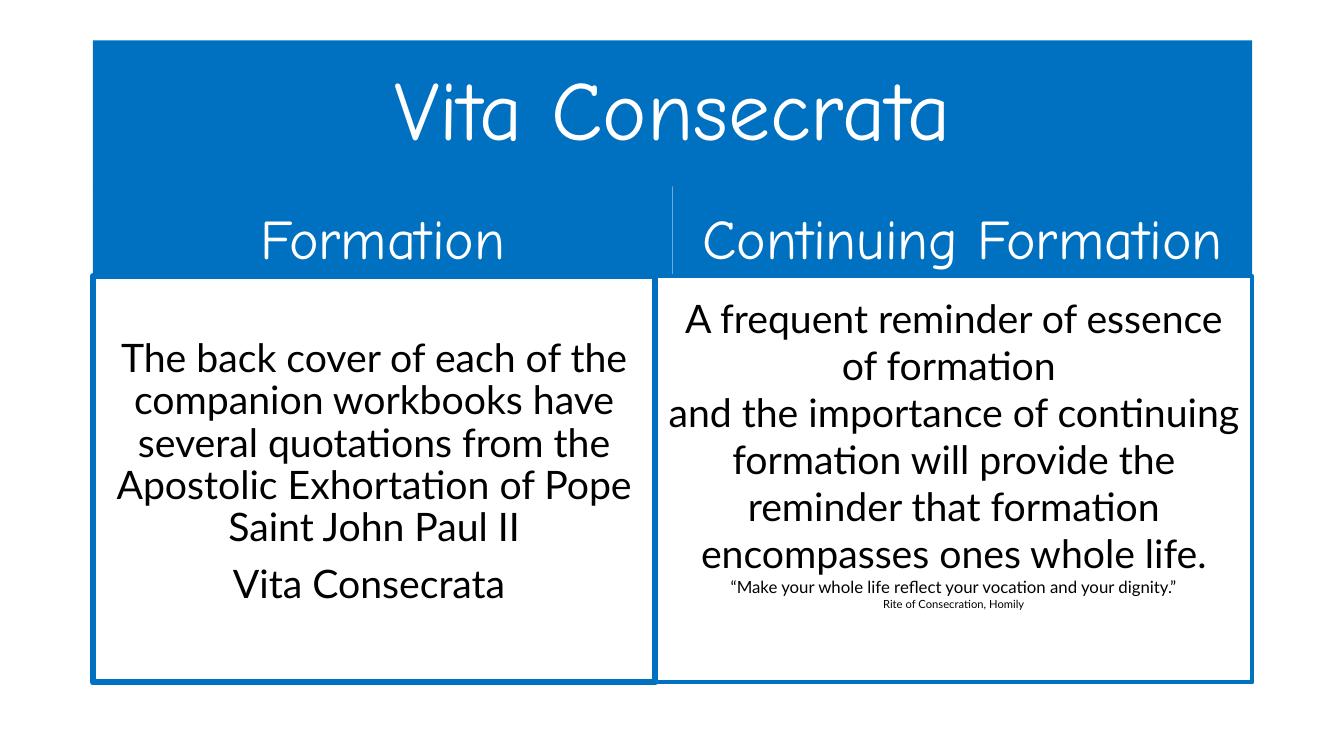
import pptx
import pptx.util
import pptx.dml.color
import pptx.enum.text
import pptx.enum.shapes

Inches = pptx.util.Inches
Pt = pptx.util.Pt
Anchor = pptx.enum.text.MSO_ANCHOR
BLUE = pptx.dml.color.RGBColor(0x00, 0x70, 0xC0)
WHITE = pptx.dml.color.RGBColor(0xFF, 0xFF, 0xFF)
BLACK = pptx.dml.color.RGBColor(0x00, 0x00, 0x00)
HEAD = "Comic Neue"
BODY = "Lato"


def write(para, text, size=28, font=BODY, color=BLACK, line=0.9, before=0):
    para.alignment = pptx.enum.text.PP_ALIGN.CENTER
    para.line_spacing = line
    para.space_before = Pt(before)
    run = para.add_run()
    run.text = text
    run.font.size = Pt(size)
    run.font.name = font
    run.font.color.rgb = color


def setup(frame, anchor, top=0.05):
    frame.word_wrap = True
    frame.auto_size = pptx.enum.text.MSO_AUTO_SIZE.NONE
    frame.vertical_anchor = anchor
    frame.margin_left = frame.margin_right = Inches(0.1)
    frame.margin_top = Inches(top)
    frame.margin_bottom = Inches(0.05)


def add_box(slide, box):
    shape = slide.shapes.add_shape(
        pptx.enum.shapes.MSO_SHAPE.RECTANGLE, *map(Inches, box))
    shape.shadow.inherit = False
    return shape


def add_title(slide, box, text):
    title = slide.shapes.title
    title.left, title.top, title.width, title.height = map(Inches, box)
    title.fill.solid()
    title.fill.fore_color.rgb = BLUE
    setup(title.text_frame, Anchor.MIDDLE)
    write(title.text_frame.paragraphs[0], text, size=60, font=HEAD, color=WHITE)


def add_head(slide, box, text):
    shape = add_box(slide, box)
    shape.fill.solid()
    shape.fill.fore_color.rgb = BLUE
    shape.line.fill.background()
    setup(shape.text_frame, Anchor.BOTTOM)
    write(shape.text_frame.paragraphs[0], text, size=40, font=HEAD, color=WHITE)


def add_panel(slide, box, lines, width, top, line, gap):
    shape = add_box(slide, box)
    shape.fill.background()
    shape.line.color.rgb = BLUE
    shape.line.width = Pt(width)
    frame = shape.text_frame
    setup(frame, Anchor.TOP, top)
    for i, (text, size) in enumerate(lines):
        para = frame.add_paragraph() if i else frame.paragraphs[0]
        write(para, text, size=size, line=line, before=gap if i else 0)


def main():
    deck = pptx.Presentation()
    deck.slide_width = Inches(13.33)
    deck.slide_height = Inches(7.5)
    slide = deck.slides.add_slide(deck.slide_layouts[5])

    left, wide, split = 0.92, 11.5, 5.58
    half = wide / 2
    add_title(slide, (left, 0.4, wide, 1.45), "Vita Consecrata")
    for i, text in enumerate(("Formation", "Continuing Formation")):
        add_head(slide, (left + i * half, 1.84, half, 0.9), text)

    add_panel(slide, (left, 2.74, split, 4.03), [
        ("The back cover of each of the companion workbooks have several "
         "quotations from the Apostolic Exhortation of Pope Saint John Paul II", 28),
        ("Vita Consecrata ", 28),
    ], width=4.5, top=0.62, line=0.9, gap=10)
    add_panel(slide, (left + split, 2.74, wide - split, 4.03), [
        ("A frequent reminder of essence of formation ", 28),
        ("and the importance of continuing formation will provide the "
         "reminder that formation encompasses ones whole life.", 28),
        ("“Make your whole life reflect your vocation and your dignity.”", 12),
        ("Rite of Consecration, Homily", 8),
    ], width=3, top=0.18, line=1.0, gap=0)

    deck.save("out.pptx")


if __name__ == "__main__":
    main()
